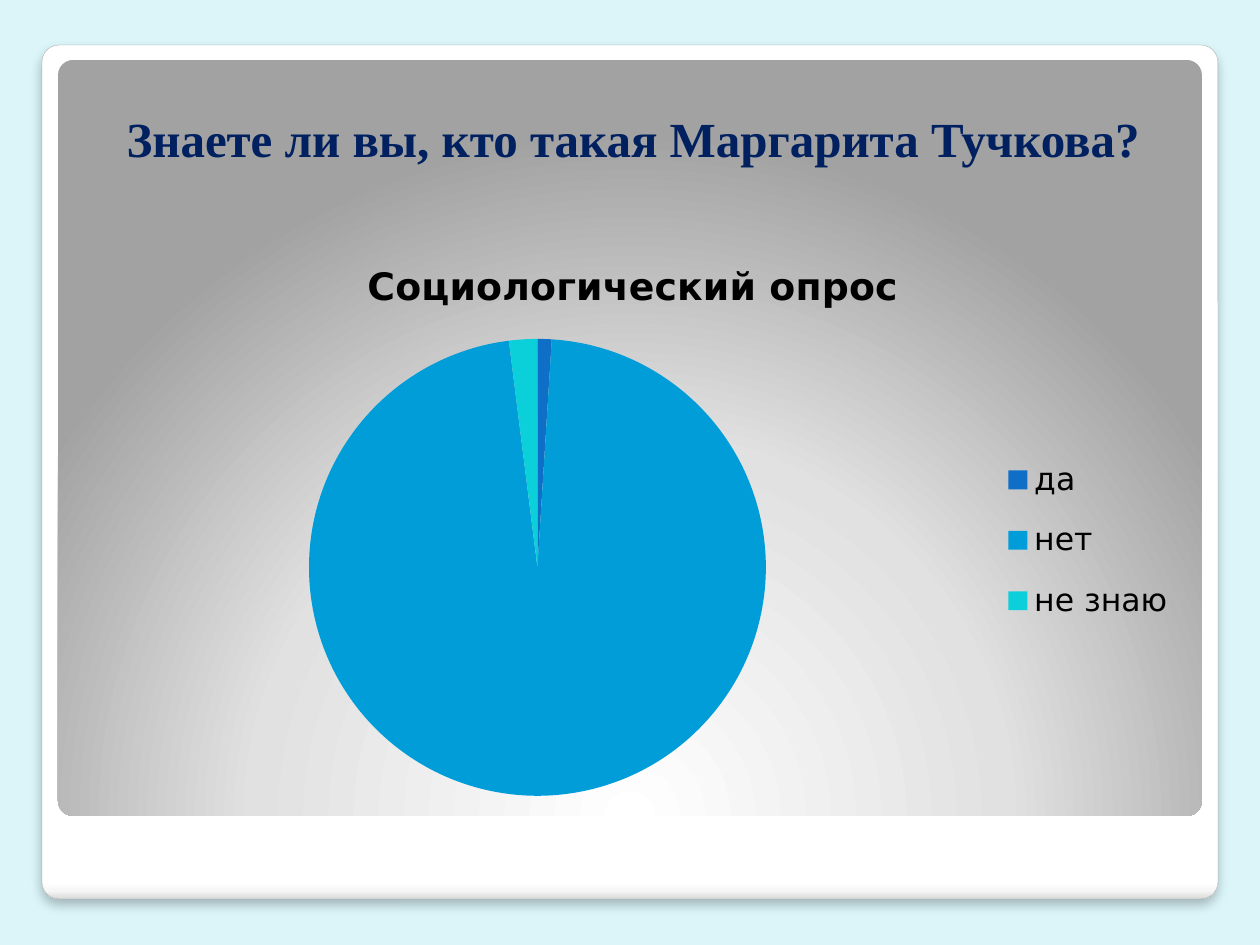
from lxml.etree import SubElement
from pptx import Presentation
from pptx.chart.data import CategoryChartData
from pptx.dml.color import RGBColor
from pptx.enum.chart import XL_CHART_TYPE, XL_LEGEND_POSITION
from pptx.enum.shapes import MSO_SHAPE
from pptx.enum.text import MSO_ANCHOR, PP_ALIGN
from pptx.oxml import parse_xml
from pptx.oxml.ns import nsdecls, qn
from pptx.util import Emu, Pt

# Content
TITLE = "Знаете ли вы, кто такая Маргарита Тучкова?"
SURVEY = "Социологический опрос"
ANSWERS = [("да", 1, "0F6FC6"), ("нет", 97, "009DD9"), ("не знаю", 2, "0BD0D9")]

THEME = {
    "background": "DBF5F9", "title": "002060", "text": "000000", "outline": "A4A4A4",
    "card": [(0, "FFFFFF"), (98, "FFFFFF"), (99, "F7F7F7"), (100, "DADADA")],
    "panel": [(0, "FFFFFF"), (55, "E1E1E1"), (100, "A2A2A2")],
    "title_font": "Times New Roman", "chart_font": "DejaVu Sans",
    "title_size": 28, "chart_title_size": 21.6, "chart_size": 18,
}
LINEAR = '<a:lin ang="5400000" scaled="0"/>'
RADIAL = ('<a:path path="circle"><a:fillToRect l="50000" t="175000" r="50000" '
          'b="-75000"/></a:path>')

# Layout in px
PX = 914400 // 126
CARD = (42, 45, 1176, 854)
PANEL = (58, 60, 1144, 756)
TITLE_BOX = (69, 29, 1128, 145)
CHART_BOX = (69, 236, 1128, 577)
PIE_BOX = (309, 339, 457, 457)
LEGEND_BOX = (996, 438, 184, 205)


def emu(box):
    return [Emu(v * PX) for v in box]


def color(name):
    return RGBColor.from_string(THEME[name])


def style(font, face, size, name, bold=False):
    font.name, font.size, font.bold = face, Pt(size), bold
    font.color.rgb = color(name)


def add_frame(shapes, box, stops, direction):
    s = shapes.add_shape(MSO_SHAPE.ROUNDED_RECTANGLE, *emu(box))
    s.adjustments[0] = 0.02
    s.shadow.inherit = False
    s.line.fill.background()
    gs = "".join(f'<a:gs pos="{pos * 1000}"><a:srgbClr val="{rgb}"/></a:gs>'
                 for pos, rgb in stops)
    s._element.spPr.find(qn("a:prstGeom")).addnext(parse_xml(
        f'<a:gradFill {nsdecls("a")} rotWithShape="1"><a:gsLst>{gs}</a:gsLst>'
        f'{direction}</a:gradFill>'))
    return s


def manual_layout(box, inner=False):
    left, top, width, height = CHART_BOX
    parts = {"xMode": "edge", "yMode": "edge",
             "x": (box[0] - left) / width, "y": (box[1] - top) / height,
             "w": box[2] / width, "h": box[3] / height}
    layout = parse_xml(f'<c:layout {nsdecls("c")}><c:manualLayout/></c:layout>')
    if inner:
        parts = {"layoutTarget": "inner", **parts}
    for tag, value in parts.items():
        SubElement(layout[0], qn(f"c:{tag}")).set("val", str(value))
    return layout


prs = Presentation()
prs.slide_width, prs.slide_height = emu((1260, 945))
slide = prs.slides.add_slide(prs.slide_layouts[5])
slide.background.fill.solid()
slide.background.fill.fore_color.rgb = color("background")

# Card and panel
card = add_frame(slide.shapes, CARD, THEME["card"], LINEAR)
card.line.color.rgb = color("outline")
card.line.width = Pt(0.16)
effects = card._element.spPr.find(qn("a:effectLst"))
effects.append(parse_xml(
    f'<a:outerShdw {nsdecls("a")} blurRad="{Pt(6)}" dist="{Pt(4)}" dir="5400000" '
    'rotWithShape="0"><a:srgbClr val="000000"><a:alpha val="25000"/></a:srgbClr>'
    '</a:outerShdw>'))
add_frame(slide.shapes, PANEL, THEME["panel"], RADIAL)

# Title, brought in front of the panel
title = slide.shapes.title
title.left, title.top, title.width, title.height = emu(TITLE_BOX)
tf = title.text_frame
tf.text = TITLE
tf.word_wrap = True
tf.vertical_anchor = MSO_ANCHOR.BOTTOM
p = tf.paragraphs[0]
p.alignment = PP_ALIGN.CENTER
style(p.runs[0].font, THEME["title_font"], THEME["title_size"], "title", True)
slide.shapes._spTree.append(title._element)

# Pie chart
data = CategoryChartData()
data.categories = [name for name, _, _ in ANSWERS]
data.add_series(SURVEY, [value for _, value, _ in ANSWERS])
chart = slide.shapes.add_chart(XL_CHART_TYPE.PIE, *emu(CHART_BOX), data).chart
style(chart.font, THEME["chart_font"], THEME["chart_size"], "text")
chart.has_title = True
chart.chart_title.text_frame.text = SURVEY
run = chart.chart_title.text_frame.paragraphs[0].runs[0]
style(run.font, THEME["chart_font"], THEME["chart_title_size"], "text", True)

plot = chart.plots[0]
plot.vary_by_categories = True
for i, (_, _, rgb) in enumerate(ANSWERS):
    fill = plot.series[0].points[i].format.fill
    fill.solid()
    fill.fore_color.rgb = RGBColor.from_string(rgb)

chart.has_legend = True
legend = chart.legend
legend.position = XL_LEGEND_POSITION.RIGHT
legend.include_in_layout = False
style(legend.font, THEME["chart_font"], THEME["chart_size"], "text")

# Pie and legend positions
plot_area = chart._chartSpace.chart.plotArea
for parent, layout in ((plot_area, manual_layout(PIE_BOX, inner=True)),
                       (legend._element, manual_layout(LEGEND_BOX))):
    old = parent.find(qn("c:layout"))
    if old is not None:
        parent.remove(old)
    parent.insert(0 if parent is plot_area else 1, layout)

prs.save("out.pptx")
